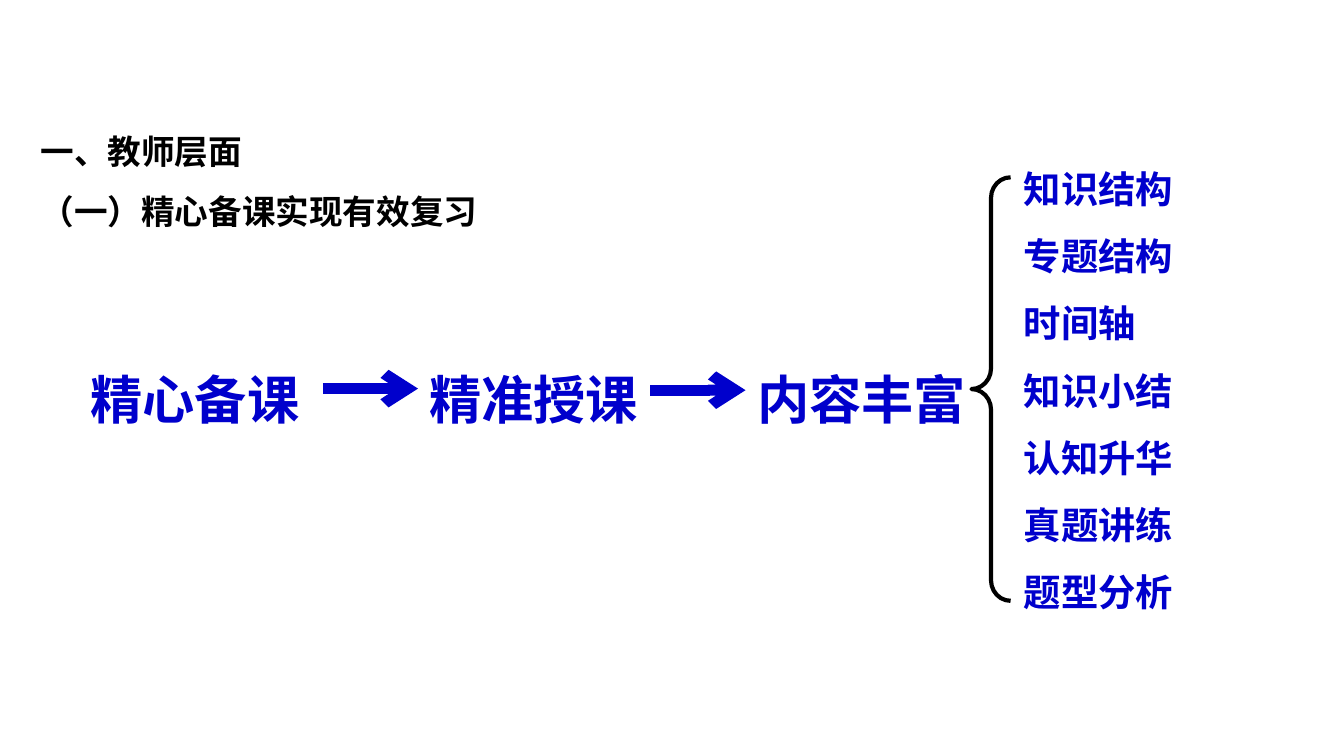
import pptx
import pptx.util
import pptx.dml.color
import pptx.enum.shapes
import pptx.enum.text
import pptx.oxml
import pptx.oxml.ns
from pptx.util import Cm

FONT = "Noto Sans CJK SC"
COLORS = {"heading": "000000", "flow": "0000CC", "brace": "000000"}
ALIGN = pptx.enum.text.PP_ALIGN


def rgb(name):
    return pptx.dml.color.RGBColor.from_string(COLORS[name])


def write_lines(sp, lines, size, color, align=ALIGN.LEFT):
    """Fill a shape with bold paragraphs at 1.5 line spacing."""
    tf = sp.text_frame
    tf.word_wrap = True
    tf.auto_size = pptx.enum.text.MSO_AUTO_SIZE.SHAPE_TO_FIT_TEXT
    tf.vertical_anchor = pptx.enum.text.MSO_ANCHOR.TOP
    tf.text = "\n".join(lines)
    for p in tf.paragraphs:
        p.alignment = align
        p.line_spacing = 1.5
        p.space_before = pptx.util.Pt(0)
        p.font.size = pptx.util.Pt(size)
        p.font.bold = True
        p.font.name = FONT
        p.font.color.rgb = rgb(color)
        # Chinese text takes its typeface from a:ea
        ea = pptx.oxml.parse_xml(
            f'<a:ea {pptx.oxml.ns.nsdecls("a")} typeface="{FONT}"/>')
        p.font._element.append(ea)


prs = pptx.Presentation()
prs.slide_width, prs.slide_height = Cm(25.4), Cm(14.28)
s = prs.slides.add_slide(prs.slide_layouts[5])

# Heading
title = s.shapes.title
title.left, title.top, title.width, title.height = Cm(0.51), Cm(1.96), Cm(23.6), Cm(2.44)
write_lines(title, ["一、教师层面", "（一）精心备课实现有效复习"], 18, "heading")

# Three steps
for left, step in [(0.89, "精心备课"), (7.29, "精准授课"), (13.49, "内容丰富")]:
    sp = s.shapes.add_textbox(Cm(left), Cm(6.22), Cm(5.59), Cm(1.83))
    write_lines(sp, [step], 28, "flow", ALIGN.CENTER)

# Arrows between the steps
for left, y in [(6.1, 7.34), (12.29, 7.37)]:
    arrow = s.shapes.add_connector(
        pptx.enum.shapes.MSO_CONNECTOR.STRAIGHT, Cm(left), Cm(y), Cm(left + 1.8), Cm(y))
    arrow.line.color.rgb = rgb("flow")
    arrow.line.width = pptx.util.Pt(5.75)
    ns = pptx.oxml.ns.nsdecls("a")
    arrow.line._get_or_add_ln().append(
        pptx.oxml.parse_xml(f'<a:tailEnd {ns} type="arrow"/>'))
    arrow._element.spPr.append(pptx.oxml.parse_xml(f"<a:effectLst {ns}/>"))

# Brace and the contents it gathers
brace = s.shapes.add_shape(
    pptx.enum.shapes.MSO_SHAPE.LEFT_BRACE, Cm(18.36), Cm(3.35), Cm(0.74), Cm(8))
brace.adjustments[0] = 0.525
brace.adjustments[1] = 0.5
brace.shadow.inherit = False
brace.fill.background()
brace.line.color.rgb = rgb("brace")
brace.line.width = pptx.util.Pt(2.25)

contents = ["知识结构", "专题结构", "时间轴", "知识小结", "认知升华", "真题讲练", "题型分析"]
sp = s.shapes.add_textbox(Cm(19.1), Cm(2.59), Cm(4.85), Cm(9.09))
write_lines(sp, contents, 20, "flow")

prs.save("out.pptx")
